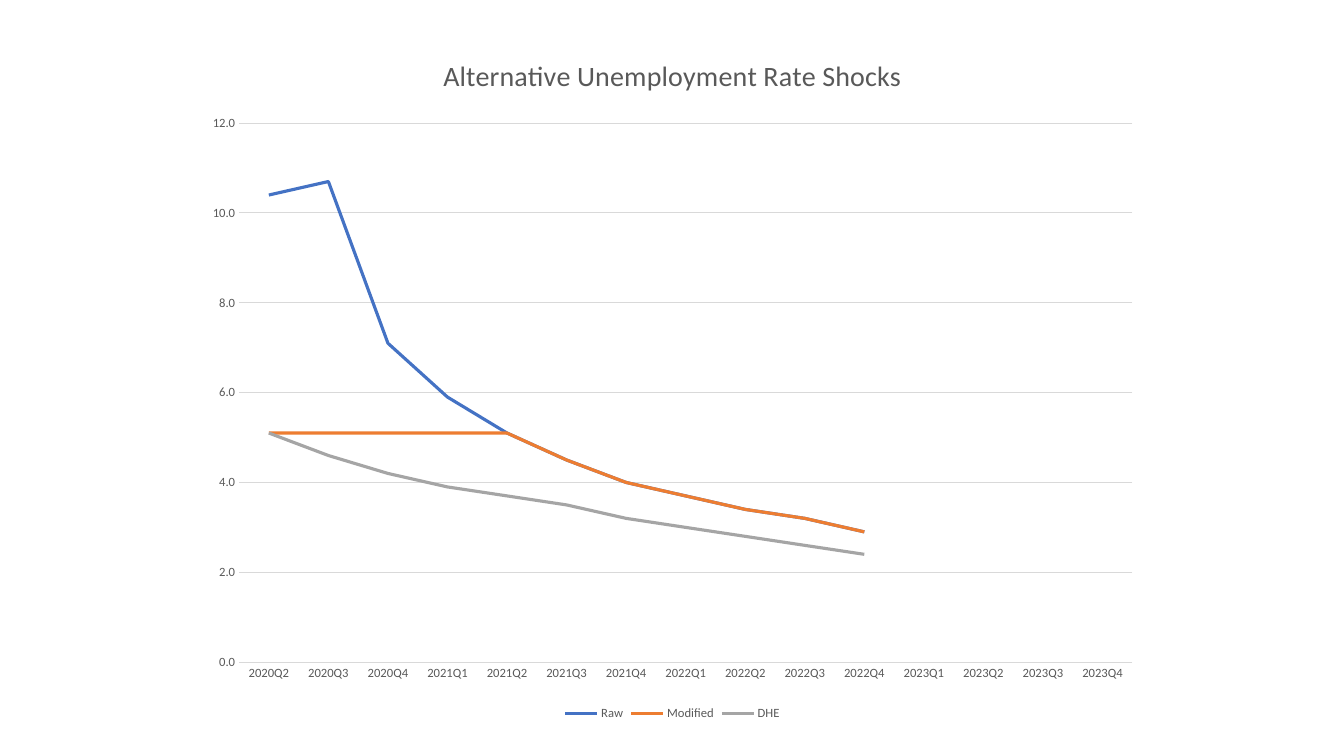
from pptx import Presentation
from pptx.chart.data import CategoryChartData
from pptx.dml.color import RGBColor
from pptx.enum.chart import XL_CHART_TYPE, XL_LEGEND_POSITION, XL_TICK_MARK
from pptx.util import Inches, Pt

FONT = "Calibri"
COLORS = {
    "text": "595959",
    "grid": "D9D9D9",
    "Raw": "4472C4",
    "Modified": "ED7D31",
    "DHE": "A5A5A5",
}
TAIL = [4.5, 4.0, 3.7, 3.4, 3.2, 2.9]  # Raw and Modified agree from 2021Q3
RATES = {
    "Raw": [10.4, 10.7, 7.1, 5.9, 5.1] + TAIL,
    "Modified": [5.1] * 5 + TAIL,
    "DHE": [5.1, 4.6, 4.2, 3.9, 3.7, 3.5, 3.2, 3.0, 2.8, 2.6, 2.4],
}
# Quarters from 2020Q2 to 2023Q4
TERMS = [f"{year}Q{term}" for year in range(2020, 2024) for term in range(1, 5)][1:]


def style(font, size):
    font.name = FONT
    font.size = Pt(size)
    font.bold = False
    font.color.rgb = RGBColor.from_string(COLORS["text"])


def stroke(line, color, width):
    line.color.rgb = RGBColor.from_string(COLORS[color])
    line.width = Pt(width)


def add_title(chart, text):
    chart.has_title = True
    chart.chart_title.include_in_layout = False
    run = chart.chart_title.text_frame.paragraphs[0].add_run()
    run.text = text
    style(run.font, 20)


def set_axes(chart):
    for axis in (chart.category_axis, chart.value_axis):
        axis.major_tick_mark = axis.minor_tick_mark = XL_TICK_MARK.NONE
        style(axis.tick_labels.font, 9)
    chart.category_axis.has_major_gridlines = False
    stroke(chart.category_axis.format.line, "grid", 0.75)

    value = chart.value_axis
    value.minimum_scale, value.maximum_scale, value.major_unit = 0, 12, 2
    value.tick_labels.number_format = "0.0"
    value.tick_labels.number_format_is_linked = False
    value.format.line.fill.background()
    value.has_major_gridlines = True
    stroke(value.major_gridlines.format.line, "grid", 0.75)


def add_rates(slide, left, top, width, height):
    data = CategoryChartData(number_format="0.0")
    data.categories = TERMS
    for name, rates in RATES.items():
        data.add_series(name, rates + [None] * (len(TERMS) - len(rates)))
    frame = slide.shapes.add_chart(XL_CHART_TYPE.LINE, left, top, width, height, data)
    chart = frame.chart
    style(chart.font, 10)
    add_title(chart, "Alternative Unemployment Rate Shocks")
    set_axes(chart)

    # Lines
    chart.plots[0].vary_by_categories = False
    for series in chart.plots[0].series:
        series.smooth = False
        stroke(series.format.line, series.name, 2.25)

    # Legend
    chart.has_legend = True
    chart.legend.position = XL_LEGEND_POSITION.BOTTOM
    chart.legend.include_in_layout = False
    style(chart.legend.font, 9)


def main():
    deck = Presentation()
    deck.slide_width, deck.slide_height = Inches(13.33), Inches(7.5)
    slide = deck.slides.add_slide(deck.slide_layouts[6])
    add_rates(slide, Inches(1.92), Inches(0.31), Inches(9.5), Inches(6.88))
    deck.save("out.pptx")


if __name__ == "__main__":
    main()
